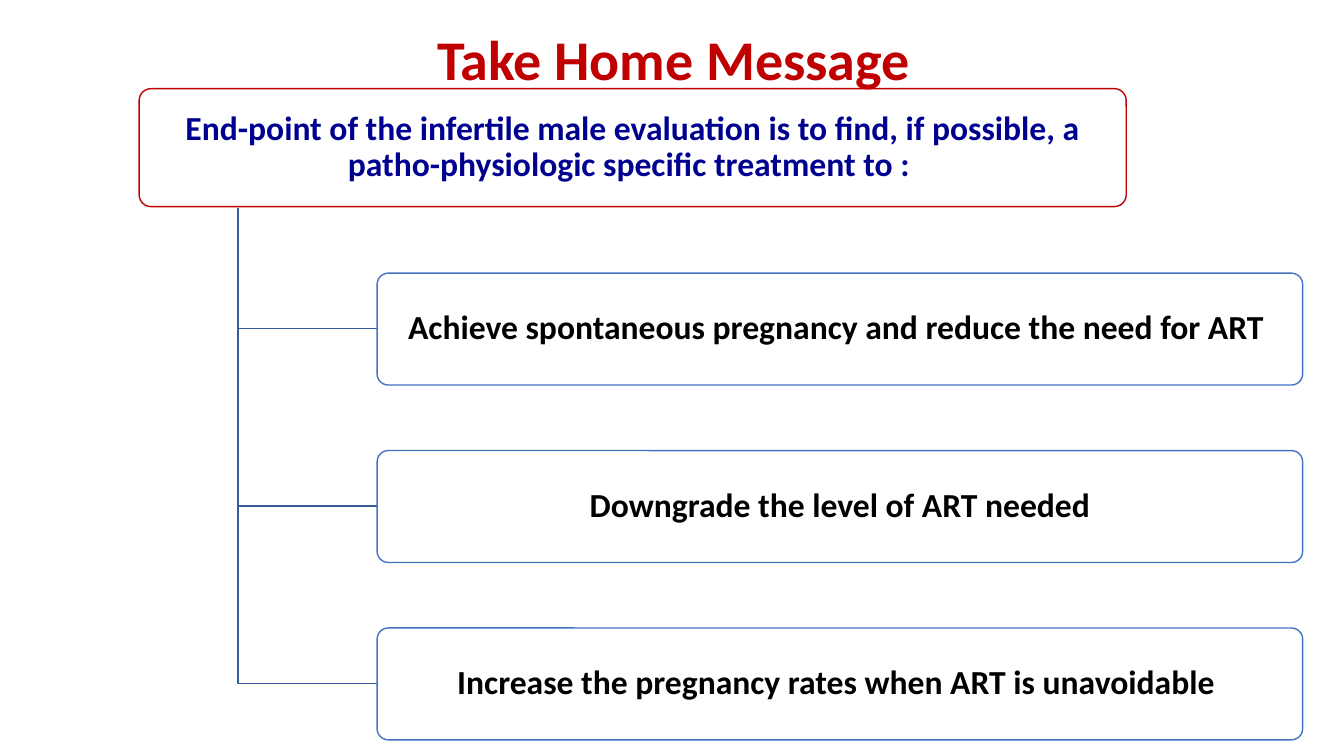
import pptx
import pptx.dml.color
import pptx.enum.shapes
import pptx.enum.text
import pptx.util
import lxml.etree

PX = 9144  # EMU in one px, 100 px to the inch
FONT = "Calibri"
RED = pptx.dml.color.RGBColor(0xC0, 0x00, 0x00)
NAVY = pptx.dml.color.RGBColor(0x00, 0x00, 0x90)
BLUE = pptx.dml.color.RGBColor(0x44, 0x72, 0xC4)
DARK_BLUE = pptx.dml.color.RGBColor(0x36, 0x5B, 0x9D)
BLACK = pptx.dml.color.RGBColor(0x00, 0x00, 0x00)
WHITE = pptx.dml.color.RGBColor(0xFF, 0xFF, 0xFF)

HEADING = ("End-point of the infertile male evaluation is to find, if possible, "
           "a patho-physiologic specific treatment to : ")
GOALS = [
    "Achieve spontaneous pregnancy and reduce the need for ART ",
    "Downgrade the level of ART needed",
    "Increase the pregnancy rates when ART is unavoidable ",
]
TRUNK_X, TRUNK_TOP = 236, 206
GOAL_LEFT, GOAL_TOP, GOAL_WIDTH, GOAL_HEIGHT, GOAL_STEP = 374, 271, 918, 111, 176


def write_text(frame, text, size, color):
    frame.word_wrap = True
    para = frame.paragraphs[0]
    para.alignment = pptx.enum.text.PP_ALIGN.CENTER
    para.line_spacing = 0.9
    span = para.add_run()
    span.text = text
    span.font.name = FONT
    span.font.size = pptx.util.Pt(size)
    span.font.bold = True
    span.font.color.rgb = color


def set_outline(shape, color):
    shape.shadow.inherit = False
    shape.line.color.rgb = color
    shape.line.width = pptx.util.Pt(1)


def add_title(page, text):
    title = page.shapes.title
    title.left, title.top = 93 * PX, -41 * PX
    title.width, title.height = 1150 * PX, 145 * PX
    frame = title.text_frame
    frame.auto_size = pptx.enum.text.MSO_AUTO_SIZE.NONE
    frame.vertical_anchor = pptx.enum.text.MSO_ANCHOR.BOTTOM
    frame.margin_bottom = 12 * PX
    write_text(frame, text, 40, RED)


def add_box(page, left, top, width, height, text, text_color, line_color):
    box = page.shapes.add_shape(
        pptx.enum.shapes.MSO_SHAPE.ROUNDED_RECTANGLE,
        left * PX, top * PX, width * PX, height * PX)
    box.adjustments[0] = 0.1
    box.fill.background()
    set_outline(box, line_color)
    frame = box.text_frame
    frame.margin_left = frame.margin_right = 8 * PX
    frame.margin_top = frame.margin_bottom = 6 * PX
    frame.vertical_anchor = pptx.enum.text.MSO_ANCHOR.MIDDLE
    write_text(frame, text, 24, text_color)
    return box


def fill_translucent(box, color, percent):
    box.fill.solid()
    box.fill.fore_color.rgb = color
    tag = pptx.oxml.ns.qn("a:srgbClr")
    swatch = box.fill._xPr.find(pptx.oxml.ns.qn("a:solidFill")).find(tag)
    alpha = lxml.etree.SubElement(swatch, pptx.oxml.ns.qn("a:alpha"))
    alpha.set("val", str(percent * 1000))


def add_branch(page, end_y):
    builder = page.shapes.build_freeform(TRUNK_X, TRUNK_TOP, scale=PX)
    builder.add_line_segments([(TRUNK_X, end_y), (GOAL_LEFT, end_y)], close=False)
    branch = builder.convert_to_shape()
    branch.fill.background()
    set_outline(branch, DARK_BLUE)


def main():
    deck = pptx.Presentation()
    deck.slide_width, deck.slide_height = 1333 * PX, 750 * PX
    page = deck.slides.add_slide(deck.slide_layouts[5])

    # Title and heading
    add_title(page, "Take Home Message")
    add_box(page, 138, 88, 979, 117, HEADING, NAVY, RED)

    # Goals, each hanging from the trunk
    for index, goal in enumerate(GOALS):
        top = GOAL_TOP + index * GOAL_STEP
        add_branch(page, top + GOAL_HEIGHT // 2)
        box = add_box(page, GOAL_LEFT, top, GOAL_WIDTH, GOAL_HEIGHT, goal, BLACK, BLUE)
        fill_translucent(box, WHITE, 90)

    deck.save("out.pptx")


if __name__ == "__main__":
    main()
